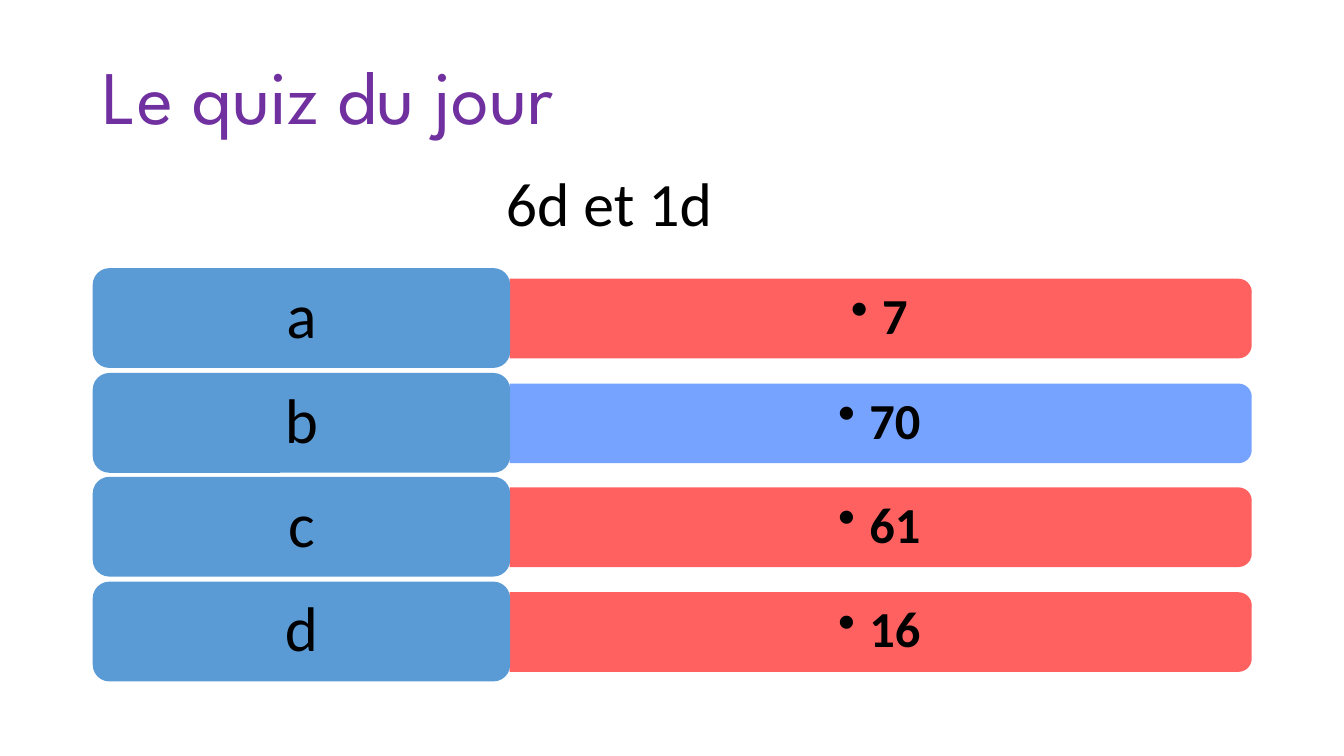
from dataclasses import dataclass

from lxml import etree
from pptx import Presentation
from pptx.dml.color import RGBColor
from pptx.enum.shapes import MSO_SHAPE
from pptx.enum.text import MSO_ANCHOR, MSO_AUTO_SIZE, PP_ALIGN
from pptx.oxml.ns import qn
from pptx.util import Emu, Pt

ROUND = MSO_SHAPE.ROUNDED_RECTANGLE
TAB = MSO_SHAPE.ROUND_2_SAME_RECTANGLE
MIDDLE, TOP = MSO_ANCHOR.MIDDLE, MSO_ANCHOR.TOP
LEFT, CENTER = PP_ALIGN.LEFT, PP_ALIGN.CENTER
FIXED = MSO_AUTO_SIZE.NONE
SCALE = 9144


@dataclass(frozen=True)
class Theme:
    title: str = "7030A0"
    ink: str = "000000"
    label: str = "5B9BD5"
    wrong: str = "FF5050"
    right: str = "6699FF"
    head: str = "League Spartan"
    body: str = "Calibri"
    title_size: int = 54
    ask_size: int = 44
    label_size: int = 45
    reply_size: int = 36


def px(value):
    return Emu(value * SCALE)


def write(frame, text, size, color, font, bold=False, align=LEFT,
          anchor=MIDDLE, pad=(10, 5), line=0.9, bullet=0):
    frame.word_wrap = True
    frame.auto_size = FIXED
    frame.vertical_anchor = anchor
    frame.margin_left = frame.margin_right = px(pad[0])
    frame.margin_top = frame.margin_bottom = px(pad[1])
    para = frame.paragraphs[0]
    para.alignment = align
    para.line_spacing = line
    run = para.add_run()
    run.text = text
    run.font.size = Pt(size)
    run.font.name = font
    run.font.bold = bold
    run.font.color.rgb = RGBColor.from_string(color)
    if bullet:
        para.level = 1
        props = para._p.get_or_add_pPr()
        props.set("marL", str(px(bullet)))
        props.set("indent", str(-px(bullet)))
        etree.SubElement(props, qn("a:buChar")).set("char", "•")


class Quiz:
    def __init__(self, deck, theme):
        self.theme = theme
        self.slide = deck.slides.add_slide(deck.slide_layouts[5])

    def title(self, text, *box):
        shape = self.slide.shapes.title
        shape.left, shape.top, shape.width, shape.height = map(px, box)
        write(shape.text_frame, text, self.theme.title_size,
              self.theme.title, self.theme.head)

    def block(self, kind, color, *box):
        shape = self.slide.shapes.add_shape(kind, *map(px, box))
        shape.shadow.inherit = False
        shape.fill.solid()
        shape.fill.fore_color.rgb = RGBColor.from_string(color)
        shape.line.fill.background()
        return shape

    def text(self, text, *box, **form):
        shape = self.slide.shapes.add_textbox(*map(px, box))
        write(shape.text_frame, text, color=self.theme.ink,
              font=self.theme.body, **form)

    def label(self, text, *box):
        shape = self.block(ROUND, self.theme.label, *box)
        write(shape.text_frame, text, self.theme.label_size, self.theme.ink,
              self.theme.body, align=CENTER, pad=(24, 14))

    def bar(self, text, color, left, top, width, height):
        shift = (width - height) // 2
        shape = self.block(TAB, color, left + shift, top - shift,
                           height, width)
        shape.rotation = 90
        tint = shape.fill._xPr.find(".//" + qn("a:srgbClr"))
        etree.SubElement(tint, qn("a:alpha")).set("val", "90000")
        self.text(text, left, top + 4, width - 4, height - 8,
                  size=self.theme.reply_size, bold=True, align=CENTER,
                  pad=(15, 7), bullet=31)


def main():
    deck = Presentation()
    deck.slide_width, deck.slide_height = px(1333), px(750)
    theme = Theme()
    quiz = Quiz(deck, theme)
    quiz.title("Le quiz du jour", 92, 27, 1150, 145)
    replies = [("a", "7"), ("b", "70"), ("c", "61"), ("d", "16")]
    pitch = 311 / 3
    for row, (name, reply) in enumerate(replies):
        top = round(266 + row * pitch)
        color = theme.right if name == "b" else theme.wrong
        quiz.bar(reply, color, 506, top + 10, 736, 79)
        quiz.label(name, 92, top, 414, 99)
    quiz.text("6d et 1d", 492, 159, 257, 84, size=theme.ask_size,
              anchor=TOP, line=1.0)
    deck.save("out.pptx")


if __name__ == "__main__":
    main()
